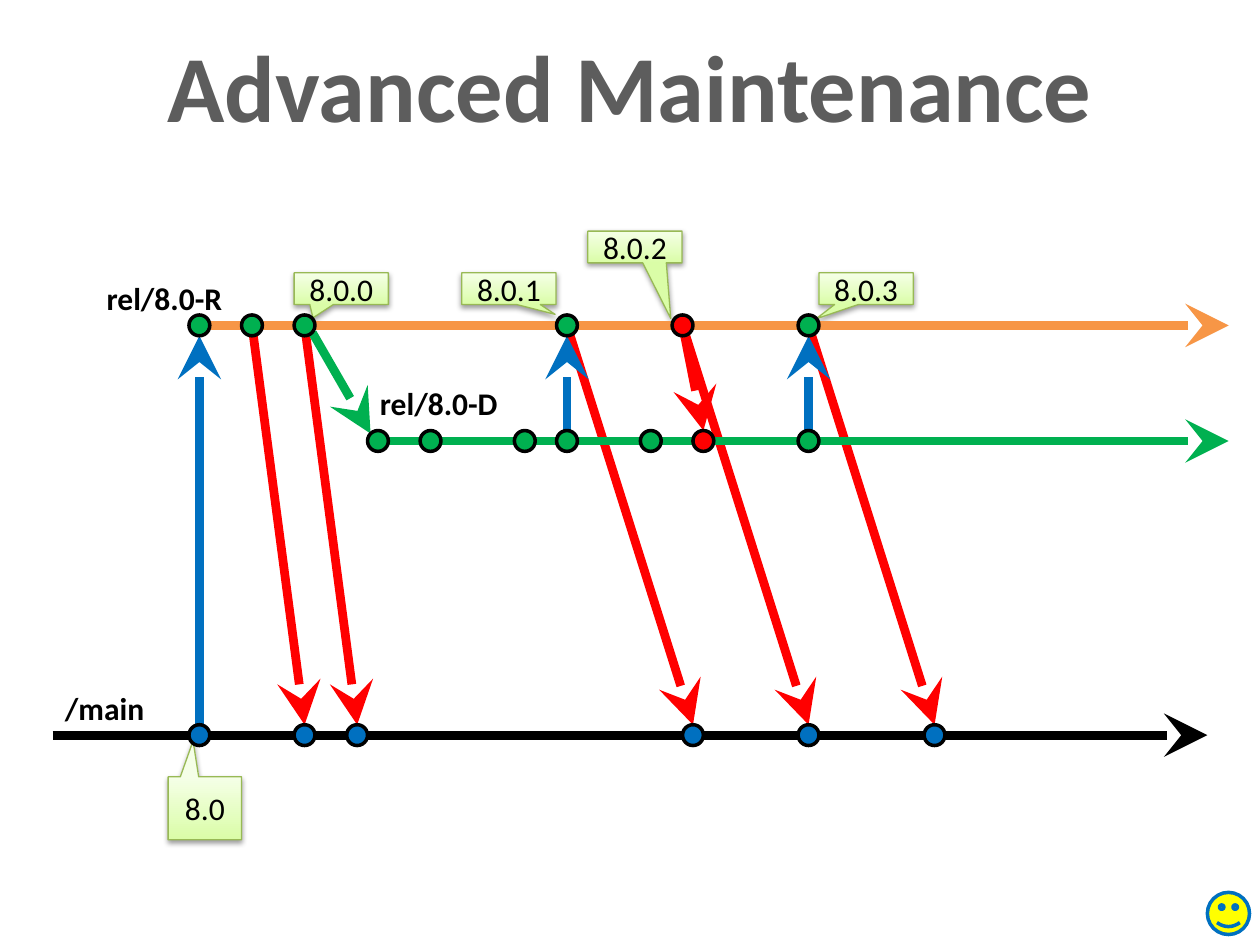
import lxml.etree
import pptx
import pptx.dml.color
import pptx.enum.shapes
import pptx.enum.text
import pptx.oxml.ns
import pptx.util

Cm = pptx.util.Cm
Pt = pptx.util.Pt
qn = pptx.oxml.ns.qn
SHAPE = pptx.enum.shapes.MSO_SHAPE
ALIGN = pptx.enum.text.PP_ALIGN
ANCHOR = pptx.enum.text.MSO_ANCHOR

COLORS = {
    "title": "5D5D5D", "black": "000000", "white": "FFFFFF",
    "red": "FF0000", "green": "00B050", "blue": "0070C0",
    "orange": "F79646", "yellow": "FFFF00",
    "tag_dark": "DAFDA7", "tag_light": "F5FFE7", "tag_edge": "98B955",
}

# Heights of the three branches and the radius of a commit, in cm
RELEASE, DEVELOP, MAIN = 6.56, 8.89, 14.82
RADIUS = 0.21


def color(name):
    return pptx.dml.color.RGBColor.from_string(COLORS[name])


def write_text(shape, text, size=18, bold=False, fill="black",
               align=ALIGN.LEFT, anchor=ANCHOR.TOP):
    frame = shape.text_frame
    frame.word_wrap = True
    frame.vertical_anchor = anchor
    paragraph = frame.paragraphs[0]
    paragraph.alignment = align
    run = paragraph.add_run()
    run.text = text
    run.font.name = "Calibri"
    run.font.size = Pt(size)
    run.font.bold = bold
    run.font.color.rgb = color(fill)


class BranchDiagram:
    def __init__(self, slide):
        self.slide = slide
        self.arrow_width = Pt(5)
        self.outline_width = Pt(2)

    def title(self, text):
        heading = self.slide.shapes.title
        heading.left, heading.top = Cm(0), Cm(0.42)
        heading.width, heading.height = Cm(25.4), Cm(2.57)
        write_text(heading, text, size=54, bold=True, fill="title",
                   align=ALIGN.CENTER, anchor=ANCHOR.MIDDLE)

    def label(self, text, left, top, width):
        box = self.slide.shapes.add_textbox(Cm(left), Cm(top), Cm(width), Cm(1.03))
        box.fill.solid()
        box.fill.fore_color.rgb = color("white")
        write_text(box, text, bold=True)

    def preset(self, kind, left, top, size, fill, outline):
        shape = self.slide.shapes.add_shape(
            kind, Cm(left), Cm(top), Cm(size), Cm(size))
        shape.shadow.inherit = False
        shape.fill.solid()
        shape.fill.fore_color.rgb = color(fill)
        shape.line.color.rgb = color(outline)
        shape.line.width = self.outline_width

    def commit(self, x, y, fill):
        self.preset(SHAPE.OVAL, x - RADIUS, y - RADIUS, 2 * RADIUS, fill, "black")

    def arrow(self, x1, y1, x2, y2, stroke):
        connector = self.slide.shapes.add_connector(
            pptx.enum.shapes.MSO_CONNECTOR.STRAIGHT, Cm(x1), Cm(y1), Cm(x2), Cm(y2))
        connector.line.color.rgb = color(stroke)
        connector.line.width = self.arrow_width
        properties = connector._element.spPr
        lxml.etree.SubElement(properties.find(qn("a:ln")), qn("a:tailEnd"),
                              type="stealth", w="lg", len="lg")
        lxml.etree.SubElement(properties, qn("a:effectLst"))

    def version_tag(self, text, left, top, pointer, width=1.9, height=0.64):
        tag = self.slide.shapes.add_shape(
            SHAPE.RECTANGULAR_CALLOUT, Cm(left), Cm(top), Cm(width), Cm(height))
        tag.adjustments[0], tag.adjustments[1] = pointer
        tag.fill.gradient()
        tag.fill.gradient_angle = 90
        for stop, name in zip(tag.fill.gradient_stops, ("tag_dark", "tag_light")):
            stop.color.rgb = color(name)
        tag.line.color.rgb = color("tag_edge")
        tag.line.width = Pt(0.75)
        self.soft_shadow(tag)
        write_text(tag, text, align=ALIGN.CENTER, anchor=ANCHOR.MIDDLE)

    def soft_shadow(self, shape):
        shape.shadow.inherit = False
        effects = shape._element.spPr.find(qn("a:effectLst"))
        shadow = lxml.etree.SubElement(
            effects, qn("a:outerShdw"), blurRad=str(Pt(3.1)), dist=str(Pt(1.6)),
            dir="5400000", rotWithShape="0")
        tint = lxml.etree.SubElement(shadow, qn("a:srgbClr"), val=COLORS["black"])
        lxml.etree.SubElement(tint, qn("a:alpha"), val="38000")


def main():
    presentation = pptx.Presentation()
    presentation.slide_width, presentation.slide_height = Cm(25.4), Cm(19.05)
    slide = presentation.slides.add_slide(presentation.slide_layouts[5])
    diagram = BranchDiagram(slide)
    diagram.title("Advanced Maintenance")

    for text, left, top, width in (("rel/8.0-R", 1.9, 5.5, 3.18),
                                   ("rel/8.0-D", 7.41, 7.62, 3.18),
                                   ("/main", 1.06, 13.76, 2.75)):
        diagram.label(text, left, top, width)

    for text, left, top, pointer in (("8.0.0", 5.93, 5.5, (-0.3, 0.92)),
                                     ("8.0.1", 9.31, 5.5, (0.49, 0.81)),
                                     ("8.0.2", 11.85, 4.66, (0.38, 2.25)),
                                     ("8.0.3", 16.51, 5.5, (-0.53, 0.95))):
        diagram.version_tag(text, left, top, pointer)
    diagram.version_tag("8.0", 3.39, 15.66, (-0.16, -1.07), width=1.48, height=1.27)

    merges_to_main = ((5.08, 6.14), (6.14, 7.2), (11.43, 13.97),
                      (13.76, 16.3), (16.3, 18.84))
    for release_x, main_x in merges_to_main:
        diagram.arrow(release_x, RELEASE, main_x, MAIN - RADIUS, "red")
    diagram.arrow(13.76, RELEASE, 14.18, DEVELOP - RADIUS, "red")

    diagram.arrow(4.23, RELEASE, 24.77, RELEASE, "orange")
    diagram.arrow(7.62, DEVELOP, 24.77, DEVELOP, "green")
    diagram.arrow(6.3, 6.71, 7.47, 8.74, "green")
    for x, source in ((4.02, MAIN), (11.43, DEVELOP), (16.3, DEVELOP)):
        diagram.arrow(x, source - RADIUS, x, RELEASE + RADIUS, "blue")
    diagram.arrow(1.06, MAIN, 24.34, MAIN, "black")

    commits = (
        (RELEASE, "green", (4.02, 5.08, 6.14, 11.43, 16.3)),
        (RELEASE, "red", (13.76,)),
        (DEVELOP, "green", (7.62, 8.68, 10.58, 11.43, 13.12, 16.3)),
        (DEVELOP, "red", (14.18,)),
        (MAIN, "blue", (4.02, 6.14, 7.2, 13.97, 16.3, 18.84)),
    )
    for y, fill, positions in commits:
        for x in positions:
            diagram.commit(x, y, fill)

    diagram.preset(SHAPE.SMILEY_FACE, 24.34, 17.99, 0.85, "yellow", "blue")
    presentation.save("out.pptx")


if __name__ == "__main__":
    main()
